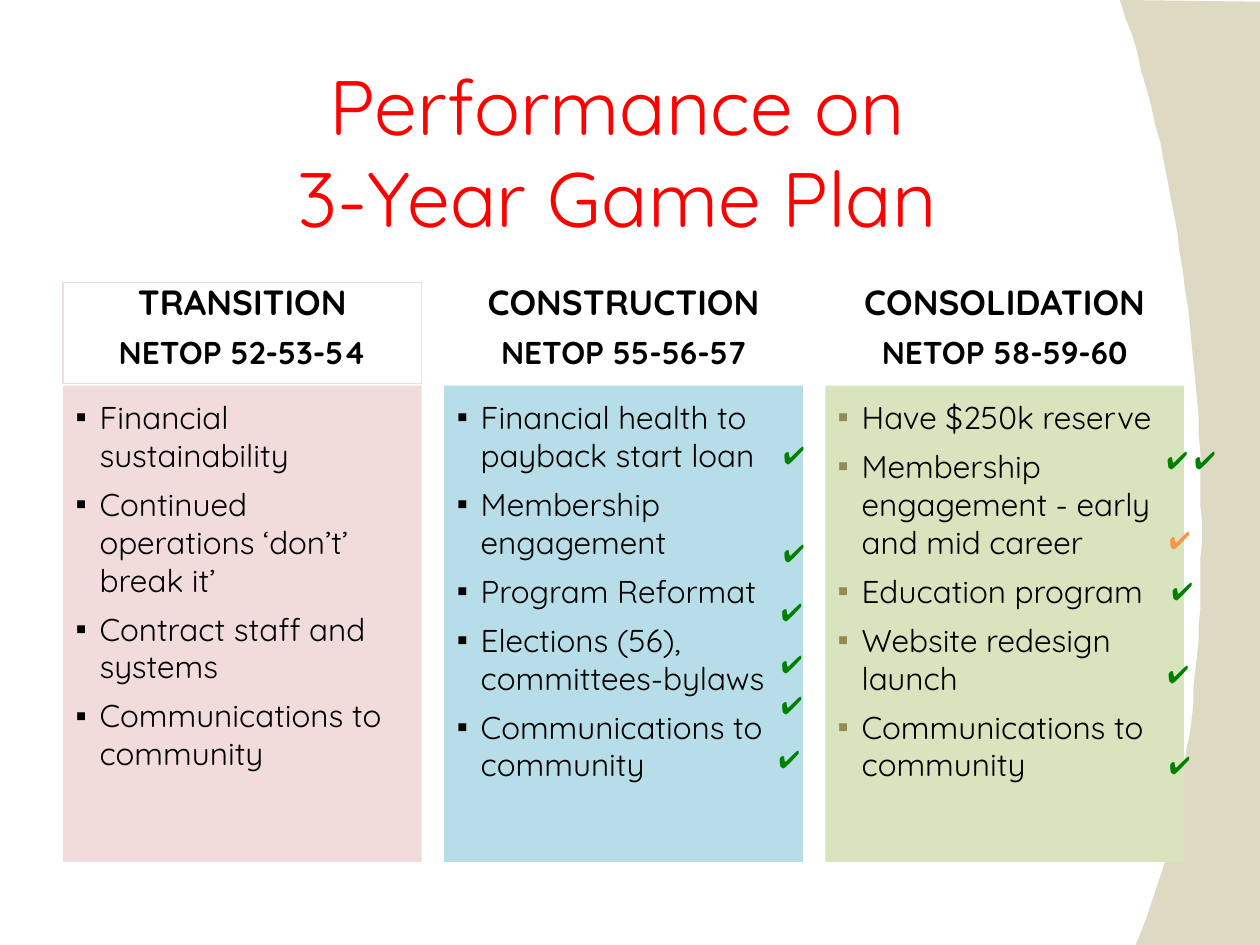
from lxml.etree import SubElement
from pptx import Presentation
from pptx.dml.color import RGBColor
from pptx.enum.text import MSO_ANCHOR, MSO_AUTO_SIZE, PP_ALIGN
from pptx.oxml.ns import qn
from pptx.util import Pt

FONT = "Quicksand"
LEFT, PITCH, WIDTH = 36, 217.8, 205
HEAD_TOP, HEAD_H = 161.3, 58
BODY_TOP, BODY_H = 220.3, 272.2
GREEN, ORANGE = "008000", "F79646"

# Heading, sessions, fill, bullet colour, list items
COLUMNS = [
    ("TRANSITION", "NETOP 52-53-54", "F2DCDB", "000000",
     ["Financial sustainability", "Continued operations ‘don’t’ break it’",
      "Contract staff and systems", "Communications to community"]),
    ("CONSTRUCTION", "NETOP 55-56-57", "B7DEE8", "000000",
     ["Financial health to payback start loan", "Membership engagement",
      "Program Reformat", "Elections (56), committees-bylaws",
      "Communications to community"]),
    ("CONSOLIDATION", "NETOP 58-59-60", "D7E4BD", "948A54",
     ["Have $250k reserve", "Membership engagement - early and mid career",
      "Education program", "Website redesign launch",
      "Communications to community"]),
]

# Left, top, colour of each check mark
CHECKS = [
    (440.6, 247.7, GREEN), (440.6, 303.8, GREEN), (439.2, 337.7, GREEN),
    (439.2, 367.2, GREEN), (439.2, 391, GREEN), (437.8, 421.9, GREEN),
    (659.5, 250.6, GREEN), (675.4, 250.6, GREEN), (661, 296.6, ORANGE),
    (662.4, 325.4, GREEN), (660.2, 373, GREEN), (661, 424.8, GREEN),
]


def rgb(value):
    return RGBColor.from_string(value)


def apply(obj, values):
    for name, value in values.items():
        setattr(obj, name, value)


def place(sp, left, top, width, height):
    apply(sp, dict(left=Pt(left), top=Pt(top), width=Pt(width), height=Pt(height)))


def frame(sp, anchor=MSO_ANCHOR.TOP, inset=7.2):
    tf = sp.text_frame
    apply(tf, dict(word_wrap=True, auto_size=MSO_AUTO_SIZE.NONE,
                   vertical_anchor=anchor, margin_top=Pt(inset),
                   margin_bottom=Pt(inset), margin_left=Pt(7.2),
                   margin_right=Pt(7.2)))
    return tf


def write(p, text, size, color="000000", name=FONT, bold=False):
    p.text = text
    for r in p.runs:
        apply(r.font, dict(size=Pt(size), name=name, bold=bold))
        r.font.color.rgb = rgb(color)


def paragraphs(tf, texts):
    for i, text in enumerate(texts):
        p = tf.add_paragraph() if i else tf.paragraphs[0]
        yield p, text, Pt(6.4 if i else 0)


def add_bullet(p, color):
    pPr = p._p.get_or_add_pPr()
    pPr.set("marL", str(Pt(13.7)))
    pPr.set("indent", str(-Pt(13.7)))
    SubElement(SubElement(pPr, qn("a:buClr")), qn("a:srgbClr"), val=color)
    SubElement(pPr, qn("a:buFont"), typeface="Arial")
    SubElement(pPr, qn("a:buChar"), char="▪")


def add_side_band(slide):
    # Cubic curve down the band's left edge, sampled as short segments
    curve = [(648.7, 540), (694.1, 445.7), (707, 198), (640.1, 0)]
    steps = 60
    points = []
    for i in range(steps + 1):
        t = i / steps
        weights = ((1 - t) ** 3, 3 * t * (1 - t) ** 2, 3 * t * t * (1 - t), t ** 3)
        points.append(tuple(sum(w * c[k] for w, c in zip(weights, curve))
                            for k in (0, 1)))
    builder = slide.shapes.build_freeform(720, 1.4, scale=Pt(1))
    builder.add_line_segments([(720, 540)] + points, close=True)
    sp = builder.convert_to_shape()
    sp.shadow.inherit = False
    sp.fill.solid()
    sp.fill.fore_color.rgb = rgb("DDD9C3")
    sp.line.fill.background()
    slide.shapes._spTree.insert(2, sp._element)  # behind everything


def add_title(slide, text):
    sp = slide.shapes.title
    place(sp, 28.8, 41, 648, 90)
    p = frame(sp, MSO_ANCHOR.MIDDLE).paragraphs[0]
    write(p, text, 44, "FF0000")
    p.alignment = PP_ALIGN.CENTER


def fill_heading(sp, left, texts):
    place(sp, left, HEAD_TOP, WIDTH, HEAD_H)
    tf = frame(sp, MSO_ANCHOR.BOTTOM)
    for (p, text, gap), size in zip(paragraphs(tf, texts), (20, 18)):
        write(p, text, size, bold=True)
        apply(p, dict(alignment=PP_ALIGN.CENTER, space_before=gap))


def fill_list(sp, left, items, fill, bullet):
    place(sp, left, BODY_TOP, WIDTH, BODY_H)
    sp.fill.solid()
    sp.fill.fore_color.rgb = rgb(fill)
    for p, text, gap in paragraphs(frame(sp), items):
        add_bullet(p, bullet)
        write(p, text, 18)
        p.space_before = gap


def add_check(slide, left, top, color):
    sp = slide.shapes.add_textbox(Pt(left), Pt(top), Pt(49.7), Pt(24.5))
    write(frame(sp, inset=3.6).paragraphs[0], "✔", 14, color, "Arial")


def main():
    prs = Presentation()
    prs.slide_width, prs.slide_height = Pt(720), Pt(540)
    slide = prs.slides.add_slide(prs.slide_layouts[4])
    add_side_band(slide)
    add_title(slide, "Performance on\v3-Year Game Plan")

    # The layout holds two heading and list pairs; the third uses text boxes
    boxes = [sp for sp in slide.placeholders if sp.placeholder_format.idx]
    boxes += [slide.shapes.add_textbox(0, 0, Pt(WIDTH), Pt(HEAD_H))
              for _ in range(2)]
    for i, (heading, sessions, fill, bullet, items) in enumerate(COLUMNS):
        left = LEFT + i * PITCH
        fill_heading(boxes[2 * i], left, (heading, sessions))
        fill_list(boxes[2 * i + 1], left, items, fill, bullet)

    # Only the first heading is outlined
    line = boxes[0].line
    line.color.rgb = rgb(COLUMNS[0][2])
    line.width = Pt(0.75)

    for check in CHECKS:
        add_check(slide, *check)
    prs.save("out.pptx")


if __name__ == "__main__":
    main()
